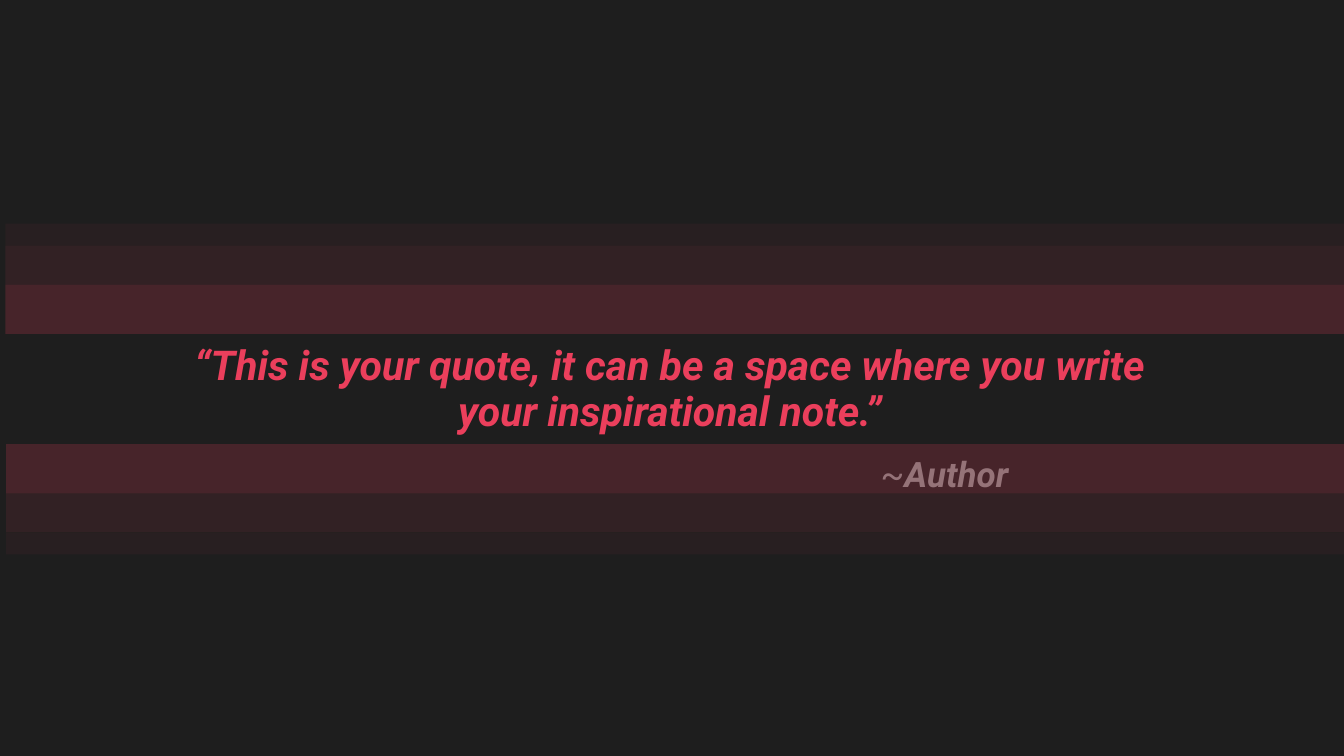
"""Build a dark quote slide framed by fading horizontal bands."""
from lxml import etree
from pptx import Presentation
from pptx.dml.color import RGBColor
from pptx.enum.shapes import MSO_SHAPE as Shape
from pptx.enum.text import PP_ALIGN as Align
from pptx.oxml.ns import qn
from pptx.util import Inches, Pt


def rgb(value):
    return RGBColor.from_string(value)


def add_run(paragraph, text, size=44, font="Roboto", color="EB3F5C", strong=False):
    run = paragraph.add_run()
    run.text = text
    run.font.size = Pt(size)
    run.font.name = font
    run.font.color.rgb = rgb(color)
    run.font.bold = run.font.italic = strong


deck = Presentation()
deck.slide_width, deck.slide_height = Inches(20), Inches(11.25)
slide = deck.slides.add_slide(deck.slide_layouts[6])
slide.background.fill.solid()
slide.background.fill.fore_color.rgb = rgb("1E1E1E")

quote = [("“This is your quote, it can be a space where you write your inspirational note.”",
          {"strong": True})]
author = [(" ", {"size": 37.5, "font": "Calibri", "color": "29B8FF"}),
          ("~", {"size": 37.5, "color": "808080"}),
          ("Author", {"size": 37.5, "color": "808080", "strong": True})]

for bounds, wording in [((2.78, 5.05, 14.39, 1.51), quote),
                        ((11.45, 6.63, 5.09, 0.76), author)]:
    frame = slide.shapes.add_textbox(*map(Inches, bounds)).text_frame
    frame.word_wrap = True
    line = frame.paragraphs[0]
    line.alignment = Align.CENTER
    line.line_spacing = Pt(49.5)
    for text, style in wording:
        add_run(line, text, **style)

upper_edge, lower_edge = 4.97, 6.61
for height, opacity in [(0.73, 20), (0.58, 10), (0.33, 5)]:
    upper_edge -= height
    for left, top, rotation in [(0.08, upper_edge, 0), (0.09, lower_edge, 180)]:
        band = slide.shapes.add_shape(Shape.RECTANGLE, Inches(left), Inches(top),
                                      Inches(19.92), Inches(height))
        band.rotation = rotation
        band.shadow.inherit = False
        band.line.fill.background()
        band.fill.solid()
        band.fill.fore_color.rgb = rgb("EB3F5C")
        tint = band.fill._xPr.find(qn("a:solidFill"))[0]
        etree.SubElement(tint, qn("a:alpha")).set("val", str(opacity * 1000))
    lower_edge += height

deck.save("out.pptx")
